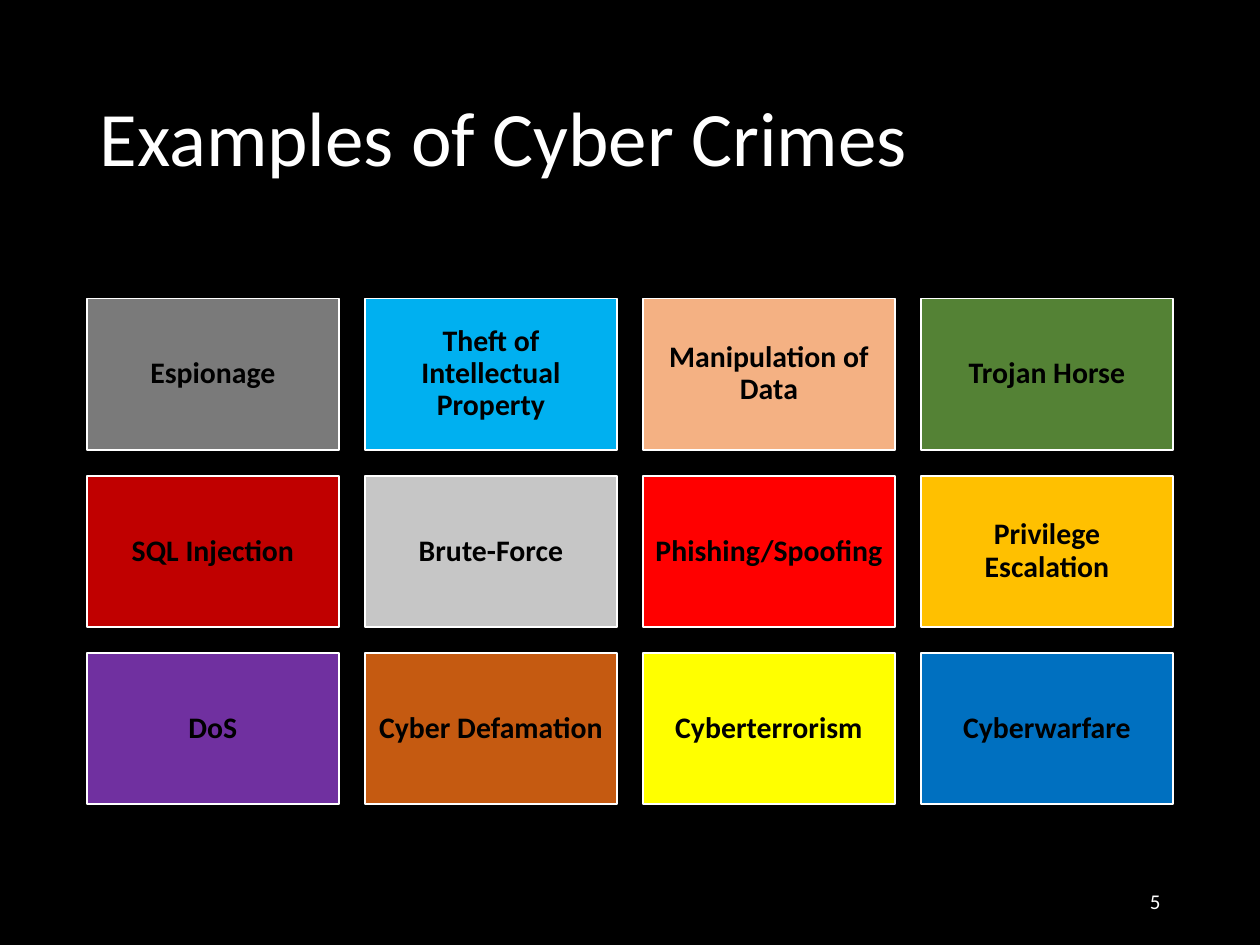
import pptx
import pptx.dml.color
import pptx.enum.shapes
import pptx.enum.text
import pptx.util
from pptx.util import Inches

FONT = "Calibri"
WHITE = "FFFFFF"
BLACK = "000000"
ALIGN = pptx.enum.text.PP_ALIGN
MARGIN = 0.69
COLUMNS = 4
CRIMES_TOP = 2.37
CRIME_WIDTH, CRIME_HEIGHT = 2.0, 1.2
COLUMN_PITCH = (10 - 2 * MARGIN - CRIME_WIDTH) / (COLUMNS - 1)
ROW_PITCH = CRIME_HEIGHT + COLUMN_PITCH - CRIME_WIDTH

CRIMES = [
    ("Espionage", "7A7A7A"),
    ("Theft of Intellectual Property", "00B0F0"),
    ("Manipulation of Data", "F4B183"),
    ("Trojan Horse", "548235"),
    ("SQL Injection", "C00000"),
    ("Brute-Force", "C6C6C6"),
    ("Phishing/Spoofing", "FF0000"),
    ("Privilege Escalation", "FFC000"),
    ("DoS", "7030A0"),
    ("Cyber Defamation", "C55A11"),
    ("Cyberterrorism", "FFFF00"),
    ("Cyberwarfare", "0070C0"),
]


def paint(color_format, hex_color):
    color_format.rgb = pptx.dml.color.RGBColor.from_string(hex_color)


def fill_solid(fill, hex_color):
    fill.solid()
    paint(fill.fore_color, hex_color)


def write(frame, text, size, color, align, bold=False, line_spacing=1.0):
    frame.word_wrap = True
    frame.auto_size = pptx.enum.text.MSO_AUTO_SIZE.NONE
    frame.vertical_anchor = pptx.enum.text.MSO_ANCHOR.MIDDLE
    frame.text = text
    paragraph = frame.paragraphs[0]
    paragraph.alignment = align
    paragraph.line_spacing = line_spacing
    paragraph.font.name = FONT
    paragraph.font.size = pptx.util.Pt(size)
    paragraph.font.bold = bold
    paint(paragraph.font.color, color)


def add_title(slide, text):
    title = slide.shapes.title
    title.left, title.top = Inches(MARGIN), Inches(0.4)
    title.width, title.height = Inches(8.62), Inches(1.45)
    write(title.text_frame, text, 44, WHITE, ALIGN.LEFT, line_spacing=0.9)


def add_crime(slide, index, name, color):
    row, column = divmod(index, COLUMNS)
    crime = slide.shapes.add_shape(
        pptx.enum.shapes.MSO_SHAPE.RECTANGLE,
        Inches(MARGIN + column * COLUMN_PITCH),
        Inches(CRIMES_TOP + row * ROW_PITCH),
        Inches(CRIME_WIDTH), Inches(CRIME_HEIGHT))
    crime.shadow.inherit = False
    fill_solid(crime.fill, color)
    paint(crime.line.color, WHITE)
    crime.line.width = pptx.util.Pt(1)
    frame = crime.text_frame
    frame.margin_left = frame.margin_right = Inches(0.07)
    frame.margin_top = frame.margin_bottom = Inches(0.07)
    write(frame, name, 17, BLACK, ALIGN.CENTER, bold=True, line_spacing=0.9)


def add_page_number(slide, number):
    page_number = slide.shapes.add_textbox(
        Inches(7.06), Inches(6.95), Inches(2.25), Inches(0.4))
    write(page_number.text_frame, number, 12, WHITE, ALIGN.RIGHT)


def main():
    deck = pptx.Presentation()
    deck.slide_width, deck.slide_height = Inches(10), Inches(7.5)
    slide = deck.slides.add_slide(deck.slide_layouts[5])
    fill_solid(slide.background.fill, BLACK)
    add_title(slide, "Examples of Cyber Crimes")
    for index, (name, color) in enumerate(CRIMES):
        add_crime(slide, index, name, color)
    add_page_number(slide, "5")
    deck.save("out.pptx")


if __name__ == "__main__":
    main()
